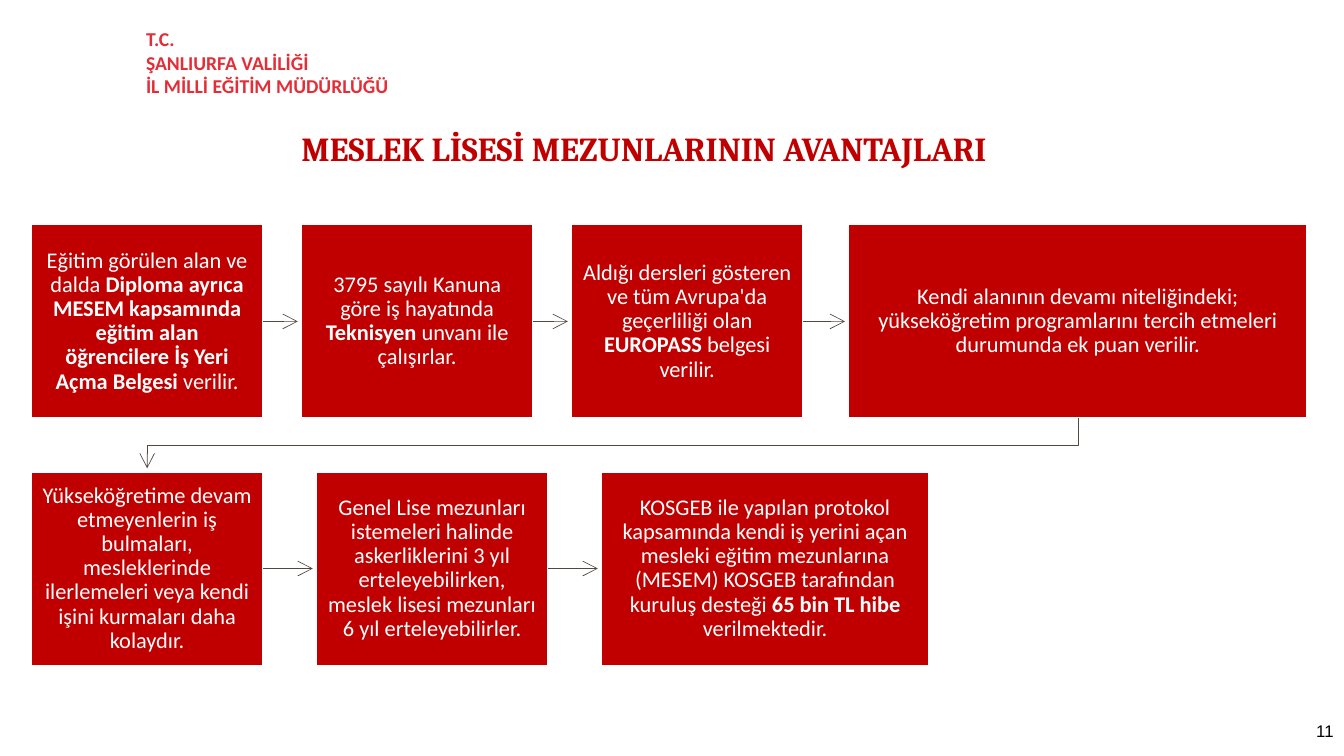
from lxml.etree import SubElement
from pptx import Presentation
from pptx.dml.color import RGBColor
from pptx.enum.shapes import MSO_CONNECTOR, MSO_SHAPE
from pptx.enum.text import MSO_ANCHOR as ANCHOR, PP_ALIGN as ALIGN
from pptx.oxml.ns import qn
from pptx.util import Pt

RED, WHITE, LINE = "C00000", "FFFFFF", "53483F"
HEADER = ["T.C.", "ŞANLIURFA VALİLİĞİ", "İL MİLLİ EĞİTİM MÜDÜRLÜĞÜ"]
TITLE = "MESLEK LİSESİ MEZUNLARININ AVANTAJLARI"
PAGE = "11"

# Each step: gap before the box, box width, text with *bold* parts
ROWS = [
    [(0, 165.6, "Eğitim görülen alan ve dalda *Diploma ayrıca MESEM kapsamında "
                "eğitim alan öğrencilere İş Yeri Açma Belgesi *verilir."),
     (27.3, 165.6, "3795 sayılı Kanuna göre iş hayatında *Teknisyen *unvanı ile çalışırlar."),
     (27.3, 165.6, "Aldığı dersleri gösteren ve tüm Avrupa'da geçerliliği olan "
                   "*EUROPASS *belgesi verilir."),
     (32.4, 327.6, "Kendi alanının devamı niteliğindeki; yükseköğretim programlarını "
                   "tercih etmeleri durumunda ek puan verilir.")],
    [(0, 165.6, "Yükseköğretime devam etmeyenlerin iş bulmaları, mesleklerinde "
                "ilerlemeleri veya kendi işini kurmaları daha kolaydır."),
     (38, 165.6, "Genel Lise mezunları istemeleri halinde askerliklerini 3 yıl "
                 "erteleyebilirken, meslek lisesi mezunları 6 yıl erteleyebilirler."),
     (38, 234, "KOSGEB ile yapılan protokol kapsamında kendi iş yerini açan mesleki "
               "eğitim mezunlarına (MESEM) KOSGEB tarafından kuruluş desteği "
               "*65 bin TL hibe *verilmektedir.")],
]
LEFT, TOP, BOX_H, ROW_PITCH = 22.3, 160.5, 138.2, 176.5
TIP_GAP = 2.5


def rgb(color):
    return RGBColor.from_string(color)


def write(sp, lines, size, color, font="Calibri", bold=False, align=ALIGN.LEFT,
          anchor=ANCHOR.TOP, margins=(7.2, 3.6, 7.2, 3.6), spacing=1.0):
    """Fill a shape with paragraphs; asterisks switch bold on and off."""
    tf = sp.text_frame
    tf.word_wrap = True
    tf.vertical_anchor = anchor
    tf.margin_left, tf.margin_top, tf.margin_right, tf.margin_bottom = map(Pt, margins)
    for i, line in enumerate(lines):
        p = tf.add_paragraph() if i else tf.paragraphs[0]
        p.alignment, p.line_spacing = align, spacing
        p.space_before = Pt(0)
        for n, part in enumerate(line.split("*")):
            r = p.add_run()
            r.text = part
            r.font.name, r.font.size = font, Pt(size)
            r.font.bold = bold or n % 2 == 1
            r.font.color.rgb = rgb(color)


def add_rect(slide, x, y, w, h, fill, line=None):
    sp = slide.shapes.add_shape(MSO_SHAPE.RECTANGLE, Pt(x), Pt(y), Pt(w), Pt(h))
    sp.shadow.inherit = False
    sp.fill.solid()
    sp.fill.fore_color.rgb = rgb(fill)
    if line:
        sp.line.color.rgb = rgb(line)
        sp.line.width = Pt(1)
    else:
        sp.line.fill.background()
    return sp


def style_arrow(sp):
    sp.line.color.rgb = rgb(LINE)
    sp.line.width = Pt(0.5)
    SubElement(sp.line._get_or_add_ln(), qn("a:tailEnd"), type="arrow", w="lg", len="lg")


def add_arrow(slide, x1, x2, y):
    c = slide.shapes.add_connector(MSO_CONNECTOR.STRAIGHT, Pt(x1), Pt(y), Pt(x2), Pt(y))
    style_arrow(c)
    SubElement(c._element.spPr, qn("a:effectLst"))


def add_bent_arrow(slide, points):
    start, *rest = [(Pt(x), Pt(y)) for x, y in points]
    builder = slide.shapes.build_freeform(*start)
    builder.add_line_segments(rest, close=False)
    sp = builder.convert_to_shape()
    sp.shadow.inherit = False
    sp.fill.background()
    style_arrow(sp)


def add_row(slide, steps, y):
    """Draw one row of steps and return the centres of its first and last box."""
    x, centres = LEFT, []
    for gap, w, text in steps:
        if gap:
            add_arrow(slide, x, x + gap - TIP_GAP, y + BOX_H / 2)
        x += gap
        box = add_rect(slide, x, y, w, BOX_H, RED, WHITE)
        write(box, [text], 16, WHITE, align=ALIGN.CENTER, anchor=ANCHOR.MIDDLE,
              margins=(7.9, 8.6, 7.9, 8.6), spacing=0.9)
        centres.append(x + w / 2)
        x += w
    return centres[0], centres[-1]


def main():
    prs = Presentation()
    prs.slide_width, prs.slide_height = Pt(960), Pt(540)
    slide = prs.slides.add_slide(prs.slide_layouts[5])

    header = add_rect(slide, 97.2, 22.3, 193, 44.6, WHITE)
    write(header, HEADER, 14, "E42E37", bold=True, anchor=ANCHOR.MIDDLE)

    title = slide.shapes.title
    title.left, title.top, title.width, title.height = Pt(214.6), Pt(90), Pt(499), Pt(31)
    write(title, [TITLE], 24, RED, font="Cambria", bold=True, margins=(0.7, 1.7, 0, 0))

    page = slide.shapes.add_textbox(Pt(833), Pt(511.2), Pt(126.7), Pt(21.6))
    write(page, [PAGE], 12, "000000", font="Arial", align=ALIGN.RIGHT)

    _, last_x = add_row(slide, ROWS[0], TOP)
    first_x, _ = add_row(slide, ROWS[1], TOP + ROW_PITCH)
    bottom, tip = TOP + BOX_H, TOP + ROW_PITCH - TIP_GAP
    turn = (bottom + TOP + ROW_PITCH) / 2
    add_bent_arrow(slide, [(last_x, bottom), (last_x, turn), (first_x, turn), (first_x, tip)])

    prs.save("out.pptx")


if __name__ == "__main__":
    main()
